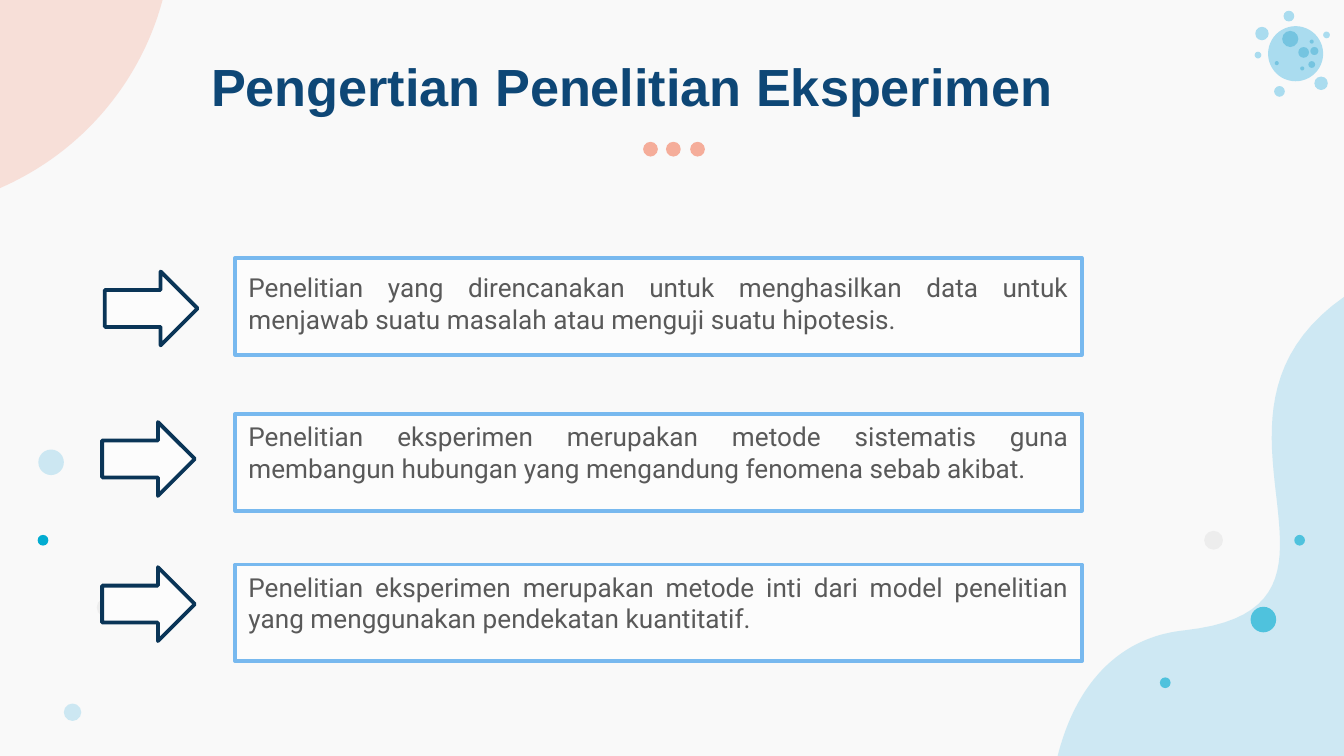
from lxml.etree import SubElement
from pptx import Presentation
from pptx.dml.color import RGBColor
from pptx.enum.shapes import MSO_SHAPE
from pptx.enum.text import MSO_ANCHOR, MSO_AUTO_SIZE, PP_ALIGN
from pptx.oxml.ns import qn
from pptx.util import Inches, Pt

WIDTH = 10
HEIGHT = WIDTH * 9 / 16
BACKGROUND = RGBColor(0xF9, 0xF9, 0xF9)
PEACH = RGBColor(0xF5, 0xAD, 0x9A)
SKY = RGBColor(0xAA, 0xDB, 0xEE)
PLANET = RGBColor(0xAA, 0xDC, 0xEF)
CRATER = RGBColor(0x75, 0xC4, 0xE0)
TEAL = RGBColor(0x02, 0xAC, 0xD1)
GREY = RGBColor(0xED, 0xED, 0xED)
PAPER = RGBColor(0xFC, 0xFC, 0xFC)
BOX_LINE = RGBColor(0x78, 0xB9, 0xEF)
NAVY = RGBColor(0x0A, 0x35, 0x57)
TITLE_BLUE = RGBColor(0x0E, 0x47, 0x76)
TEXT_GREY = RGBColor(0x59, 0x59, 0x59)

# Curves: four Bezier points each, ending at the slide's edges
PEACH_EDGE = [[(1.21, 0), (1.05, 0.6), (0.62, 1.13), (0, 1.4)]]
WAVE_EDGE = [
    [(10, 2.21), (8.72, 3.11), (10.34, 4.52), (8.82, 4.69)],
    [(8.82, 4.69), (8.31, 4.74), (8, 5.11), (7.87, HEIGHT)],
]

# Dots: centre x, centre y, diameter, colour, opacity in percent
BUBBLES = [
    (0.38, 3.44, 0.19, SKY, 57), (0.79, 4.52, 0.14, GREY, 100),
    (0.32, 4.02, 0.08, TEAL, 100), (9.4, 4.61, 0.19, TEAL, 62),
    (8.67, 5.08, 0.08, TEAL, 62), (0.54, 5.3, 0.13, SKY, 57),
    (9.03, 4.02, 0.14, GREY, 100), (9.67, 4.02, 0.08, TEAL, 62),
]
# Planet and craters: centre x, centre y, diameter
PLANET_DOTS = [
    (9.64, 0.4, 0.41), (9.59, 0.12, 0.08), (9.52, 0.68, 0.08),
    (9.39, 0.25, 0.1), (9.83, 0.62, 0.1), (9.87, 0.26, 0.05), (9.36, 0.41, 0.05),
]
CRATER_DOTS = [
    (9.6, 0.29, 0.12), (9.7, 0.39, 0.08), (9.78, 0.38, 0.06), (9.76, 0.31, 0.03),
    (9.76, 0.48, 0.05), (9.5, 0.47, 0.03), (9.69, 0.51, 0.03),
]

# Rows: box top, arrow left, arrow top, upper text margin, text
ROWS = [
    (1.92, 0.78, 2.02, 0.1,
     "Penelitian yang direncanakan untuk menghasilkan data untuk menjawab "
     "suatu masalah atau menguji suatu hipotesis."),
    (3.08, 0.76, 3.14, 0.05,
     "Penelitian eksperimen merupakan metode sistematis guna membangun "
     "hubungan yang mengandung fenomena sebab akibat."),
    (4.2, 0.76, 4.22, 0.05,
     "Penelitian eksperimen merupakan metode inti dari model penelitian "
     "yang menggunakan pendekatan kuantitatif."),
]


def paint(shape, color, opacity=100, line=None):
    shape.shadow.inherit = False
    shape.fill.solid()
    shape.fill.fore_color.rgb = color
    if opacity < 100:
        color_node = shape.fill._xPr.find(qn("a:solidFill"))[0]
        SubElement(color_node, qn("a:alpha")).set("val", str(opacity * 1000))
    if line is None:
        shape.line.fill.background()
    else:
        shape.line.color.rgb = line
        shape.line.width = Pt(2)


def add_preset(page, kind, left, top, width, height):
    return page.shapes.add_shape(
        kind, Inches(left), Inches(top), Inches(width), Inches(height))


def add_dot(page, x, y, size, color, opacity=100):
    dot = add_preset(page, MSO_SHAPE.OVAL, x - size / 2, y - size / 2, size, size)
    paint(dot, color, opacity)


def bezier_points(curve, steps=40):
    for step in range(steps + 1):
        t = step / steps
        weights = ((1 - t) ** 3, 3 * t * (1 - t) ** 2, 3 * t * t * (1 - t), t ** 3)
        yield tuple(sum(w * point[axis] for w, point in zip(weights, curve))
                    for axis in (0, 1))


def add_corner(page, corner, edge, color, opacity):
    """Fill the area between a slide corner and a curved edge."""
    points = [(Inches(x), Inches(y)) for curve in edge for x, y in bezier_points(curve)]
    builder = page.shapes.build_freeform(Inches(corner[0]), Inches(corner[1]))
    builder.add_line_segments(points, close=True)
    paint(builder.convert_to_shape(), color, opacity)


def format_text(para, font, size, color, align, bold=False):
    para.alignment = align
    for span in para.runs:
        span.font.name = font
        span.font.size = Pt(size)
        span.font.color.rgb = color
        span.font.bold = bold


def fill_frame(shape, text, margin):
    frame = shape.text_frame
    frame.text = text
    frame.word_wrap = True
    frame.auto_size = MSO_AUTO_SIZE.NONE
    frame.vertical_anchor = MSO_ANCHOR.TOP
    frame.margin_left = frame.margin_right = Inches(0.1)
    frame.margin_top = frame.margin_bottom = Inches(margin)
    return frame.paragraphs[0]


def add_title(page, text):
    title = page.shapes.title
    title.left, title.top = Inches(1.47), Inches(0.3)
    title.width, title.height = Inches(8.43), Inches(0.52)
    para = fill_frame(title, text, 0.1)
    format_text(para, "Arial", 28, TITLE_BLUE, PP_ALIGN.LEFT, bold=True)


def add_row(page, top, arrow_left, arrow_top, margin, text):
    box = add_preset(page, MSO_SHAPE.RECTANGLE, 1.75, top, 6.3, 0.72)
    paint(box, PAPER, line=BOX_LINE)
    para = fill_frame(box, text, margin)
    format_text(para, "Roboto", 14, TEXT_GREY, PP_ALIGN.JUSTIFY)
    arrow = add_preset(page, MSO_SHAPE.RIGHT_ARROW, arrow_left, arrow_top, 0.69, 0.55)
    paint(arrow, PAPER, line=NAVY)


def main():
    deck = Presentation()
    deck.slide_width, deck.slide_height = Inches(WIDTH), Inches(HEIGHT)
    page = deck.slides.add_slide(deck.slide_layouts[5])
    page.background.fill.solid()
    page.background.fill.fore_color.rgb = BACKGROUND

    add_corner(page, (0, 0), PEACH_EDGE, PEACH, 34)
    add_corner(page, (WIDTH, HEIGHT), WAVE_EDGE, SKY, 54)
    for bubble in BUBBLES:
        add_dot(page, *bubble)
    for color, dots in ((PLANET, PLANET_DOTS), (CRATER, CRATER_DOTS)):
        for dot in dots:
            add_dot(page, *dot, color)

    add_title(page, "Pengertian Penelitian Eksperimen")
    for x in (4.84, 5.01, 5.19):
        add_dot(page, x, 1.11, 0.11, PEACH)
    for row in ROWS:
        add_row(page, *row)
    deck.save("out.pptx")


if __name__ == "__main__":
    main()
